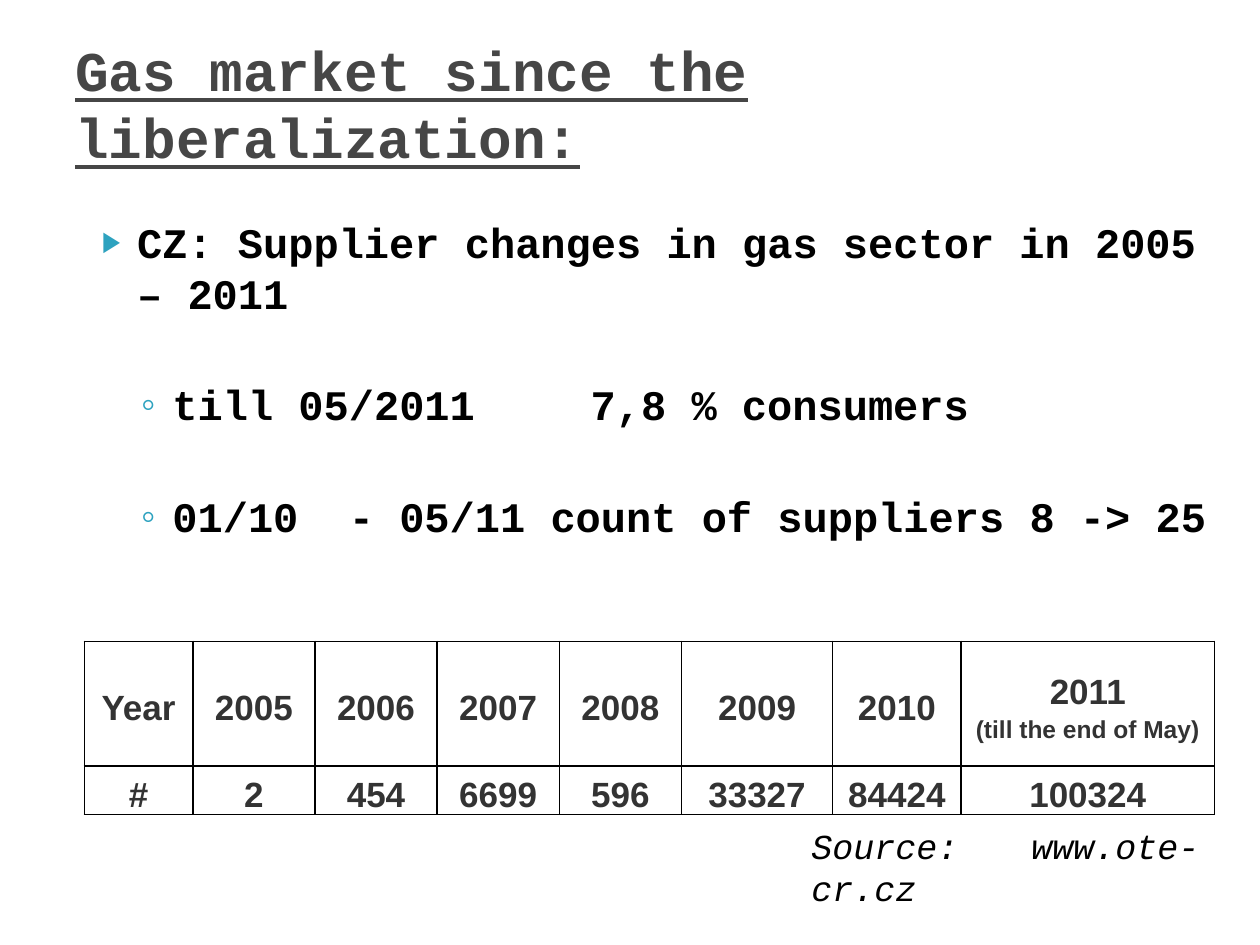
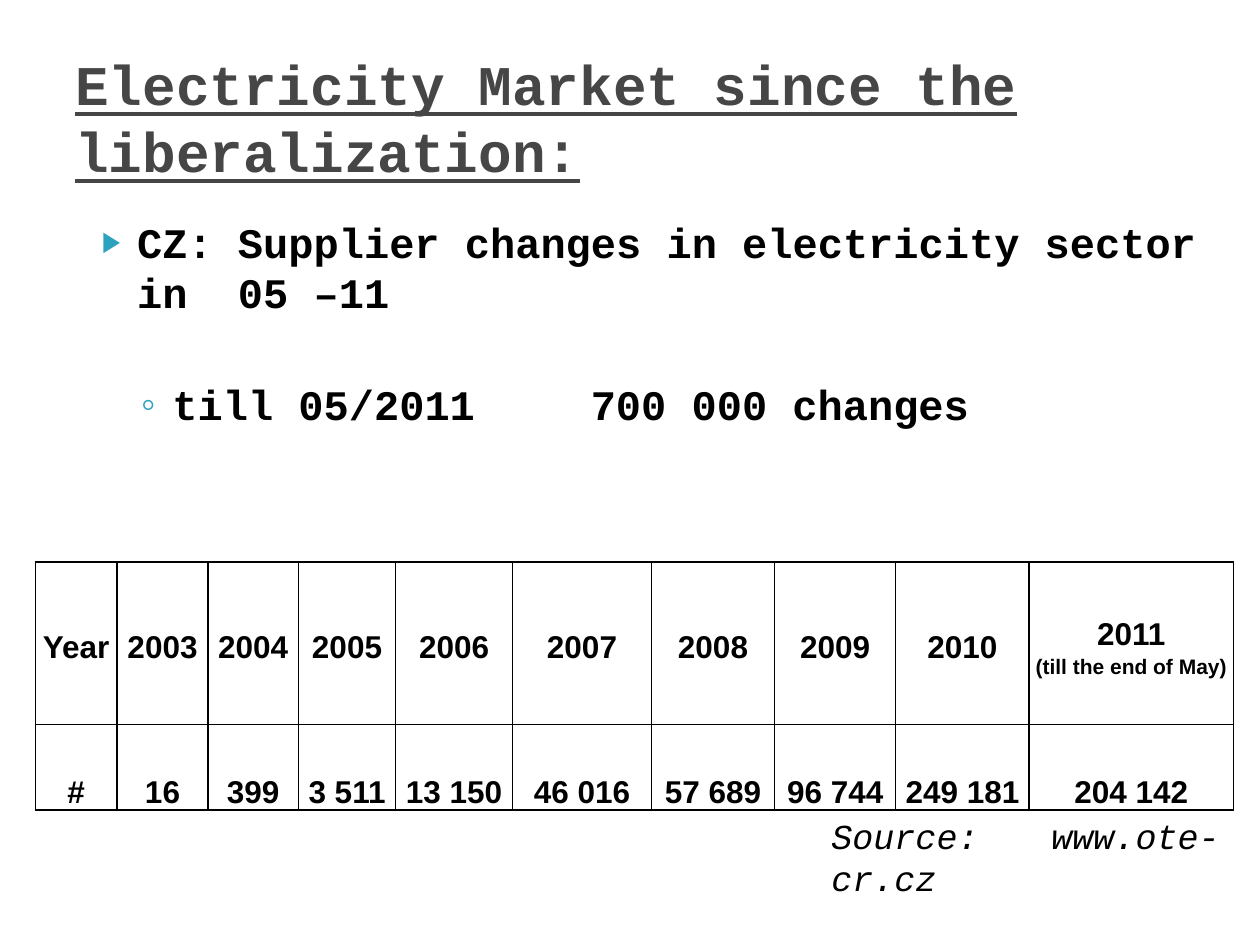
from dataclasses import dataclass

from lxml.etree import SubElement
from pptx import Presentation
from pptx.dml.color import RGBColor
from pptx.enum.text import MSO_ANCHOR as Anchor, PP_ALIGN as Align
from pptx.oxml.ns import qn
from pptx.util import Inches, Pt

BLACK = RGBColor(0x00, 0x00, 0x00)
WHITE = RGBColor(0xFF, 0xFF, 0xFF)
TITLE_GRAY = RGBColor(0x46, 0x46, 0x46)
CELL_GRAY = RGBColor(0x33, 0x33, 0x33)
BULLET_BLUE = RGBColor(0x2D, 0xA2, 0xBF)

TEXT_FONT = "Courier New"
TABLE_FONT = "Arial"
SOURCE_TEXT = "Source: www.ote-cr.cz"
LAST_YEAR_NOTE = "(till the end of May)"


@dataclass(frozen=True)
class Box:
    left: float
    top: float
    width: float
    height: float

    def lengths(self) -> list:
        return [Inches(v) for v in (self.left, self.top, self.width, self.height)]


@dataclass(frozen=True)
class BulletStyle:
    symbol: str
    indent: float
    hanging: float
    size_percent: int


@dataclass(frozen=True)
class YearTable:
    box: Box
    column_widths: list[float]
    row_heights: list[float]
    years: list[str]
    counts: list[str]
    color: RGBColor
    size: int
    note_size: int


@dataclass(frozen=True)
class MarketSlide:
    title: str
    title_box: Box
    bullets: list[str]  # the first is the heading, the rest are details
    bullets_box: Box
    table: YearTable
    source_box: Box


BULLET_STYLES = [BulletStyle("▶", 0.4, 0.28, 68), BulletStyle("◦", 0.68, 0.25, 100)]

MARKETS = [
    MarketSlide(
        title="Gas market since the liberalization:",
        title_box=Box(0.5, 0.3, 9, 1.03),
        bullets=[
            "CZ: Supplier changes in gas sector in 2005 – 2011",
            "till 05/2011\t\t7,8 % consumers",
            "01/10  - 05/11 count of suppliers 8 -> 25",
        ],
        bullets_box=Box(0.59, 1.67, 9.26, 2.61),
        table=YearTable(
            box=Box(0.67, 5.09, 8.98, 1.34),
            column_widths=[0.86, 0.97, 0.97, 0.97, 0.97, 1.2, 1.02, 2.01],
            row_heights=[0.99, 0.35],
            years=["Year", *map(str, range(2005, 2012))],
            counts=["#", "2", "454", "6699", "596", "33327", "84424", "100324"],
            color=CELL_GRAY, size=20, note_size=14,
        ),
        source_box=Box(6.34, 6.66, 3.28, 0.44),
    ),
    MarketSlide(
        title="Electricity Market since the liberalization:",
        title_box=Box(0.5, 0.3, 9.5, 1.25),
        bullets=[
            "CZ: Supplier changes in electricity sector in  05 –11",
            "till 05/2011\t\t700 000 changes",
        ],
        bullets_box=Box(0.59, 1.67, 9.21, 2),
        table=YearTable(
            box=Box(0.28, 4.46, 9.51, 1.97),
            column_widths=[0.65, 0.72, 0.72, 0.77, 0.93, 1.1, 0.98, 0.96, 1.06, 1.62],
            row_heights=[1.29, 0.68],
            years=["Year", *map(str, range(2003, 2012))],
            counts=["#", "16", "399", "3 511", "13 150", "46 016", "57 689",
                    "96 744", "249 181", "204 142"],
            color=BLACK, size=18, note_size=12,
        ),
        source_box=Box(6.5, 6.58, 3.28, 0.44),
    ),
]


def add_run(paragraph, text: str, size: int, color: RGBColor, font_name: str = TEXT_FONT,
            bold: bool = True, italic: bool = False, underline: bool = False) -> None:
    run = paragraph.add_run()
    run.text = text
    font = run.font
    font.name, font.size, font.color.rgb = font_name, Pt(size), color
    font.bold, font.italic, font.underline = bold, italic, underline


def add_text_frame(slide, box: Box, anchor: Anchor):
    frame = slide.shapes.add_textbox(*box.lengths()).text_frame
    frame.word_wrap = True
    frame.vertical_anchor = anchor
    return frame


def set_bullet(paragraph, style: BulletStyle) -> None:
    properties = paragraph._p.get_or_add_pPr()
    properties.set("marL", str(Inches(style.indent)))
    properties.set("indent", str(-Inches(style.hanging)))
    color = SubElement(properties, qn("a:buClr"))
    SubElement(color, qn("a:srgbClr"), val=str(BULLET_BLUE))
    SubElement(properties, qn("a:buSzPct"), val=str(style.size_percent * 1000))
    SubElement(properties, qn("a:buFont"), typeface=TABLE_FONT)
    SubElement(properties, qn("a:buChar"), char=style.symbol)


def add_bullets(slide, box: Box, bullets: list[str]) -> None:
    frame = add_text_frame(slide, box, Anchor.TOP)
    for index, text in enumerate(bullets):
        paragraph = frame.add_paragraph() if index else frame.paragraphs[0]
        paragraph.level = min(index, 1)
        if index:
            paragraph.space_before = Pt(35)
        set_bullet(paragraph, BULLET_STYLES[paragraph.level])
        add_run(paragraph, text, 24, BLACK)


def set_borders(cell) -> None:
    properties = cell._tc.get_or_add_tcPr()
    for side in ("lnL", "lnR", "lnT", "lnB"):
        line = SubElement(properties, qn(f"a:{side}"), w=str(Pt(1)))
        fill = SubElement(line, qn("a:solidFill"))
        SubElement(fill, qn("a:srgbClr"), val=str(BLACK))


def format_cell(cell, anchor: Anchor):
    """Style an empty cell and return its paragraph."""
    set_borders(cell)
    cell.fill.solid()
    cell.fill.fore_color.rgb = WHITE
    cell.vertical_anchor = anchor
    cell.margin_left = cell.margin_right = Inches(0.05)
    cell.margin_top = Inches(0.03) if anchor == Anchor.MIDDLE else 0
    cell.margin_bottom = 0
    paragraph = cell.text_frame.paragraphs[0]
    paragraph.alignment = Align.CENTER
    paragraph.line_spacing = 1.15
    return paragraph


def add_year_table(slide, data: YearTable) -> None:
    rows = [(data.years, Anchor.MIDDLE), (data.counts, Anchor.BOTTOM)]
    table = slide.shapes.add_table(len(rows), len(data.years), *data.box.lengths()).table
    table.first_row = table.horz_banding = False
    for column, width in zip(table.columns, data.column_widths):
        column.width = Inches(width)
    for row, height in zip(table.rows, data.row_heights):
        row.height = Inches(height)

    for row_index, (texts, anchor) in enumerate(rows):
        for column_index, text in enumerate(texts):
            paragraph = format_cell(table.cell(row_index, column_index), anchor)
            add_run(paragraph, text, data.size, data.color, TABLE_FONT)

    # The last year covers only part of the year
    paragraph = table.cell(0, len(data.years) - 1).text_frame.paragraphs[0]
    paragraph.add_line_break()
    add_run(paragraph, LAST_YEAR_NOTE, data.note_size, data.color, TABLE_FONT)


def add_market_slide(presentation, market: MarketSlide) -> None:
    slide = presentation.slides.add_slide(presentation.slide_layouts[6])

    # Title
    title = add_text_frame(slide, market.title_box, Anchor.MIDDLE).paragraphs[0]
    add_run(title, market.title, 32, TITLE_GRAY, underline=True)

    # Bullets and yearly supplier changes
    add_bullets(slide, market.bullets_box, market.bullets)
    add_year_table(slide, market.table)

    # Source line
    source = add_text_frame(slide, market.source_box, Anchor.MIDDLE).paragraphs[0]
    source.alignment = Align.JUSTIFY
    add_run(source, SOURCE_TEXT, 20, BLACK, bold=False, italic=True)


def main() -> None:
    presentation = Presentation()
    presentation.slide_width = Inches(10)
    presentation.slide_height = Inches(7.5)
    for market in MARKETS:
        add_market_slide(presentation, market)
    presentation.save("out.pptx")


if __name__ == "__main__":
    main()
